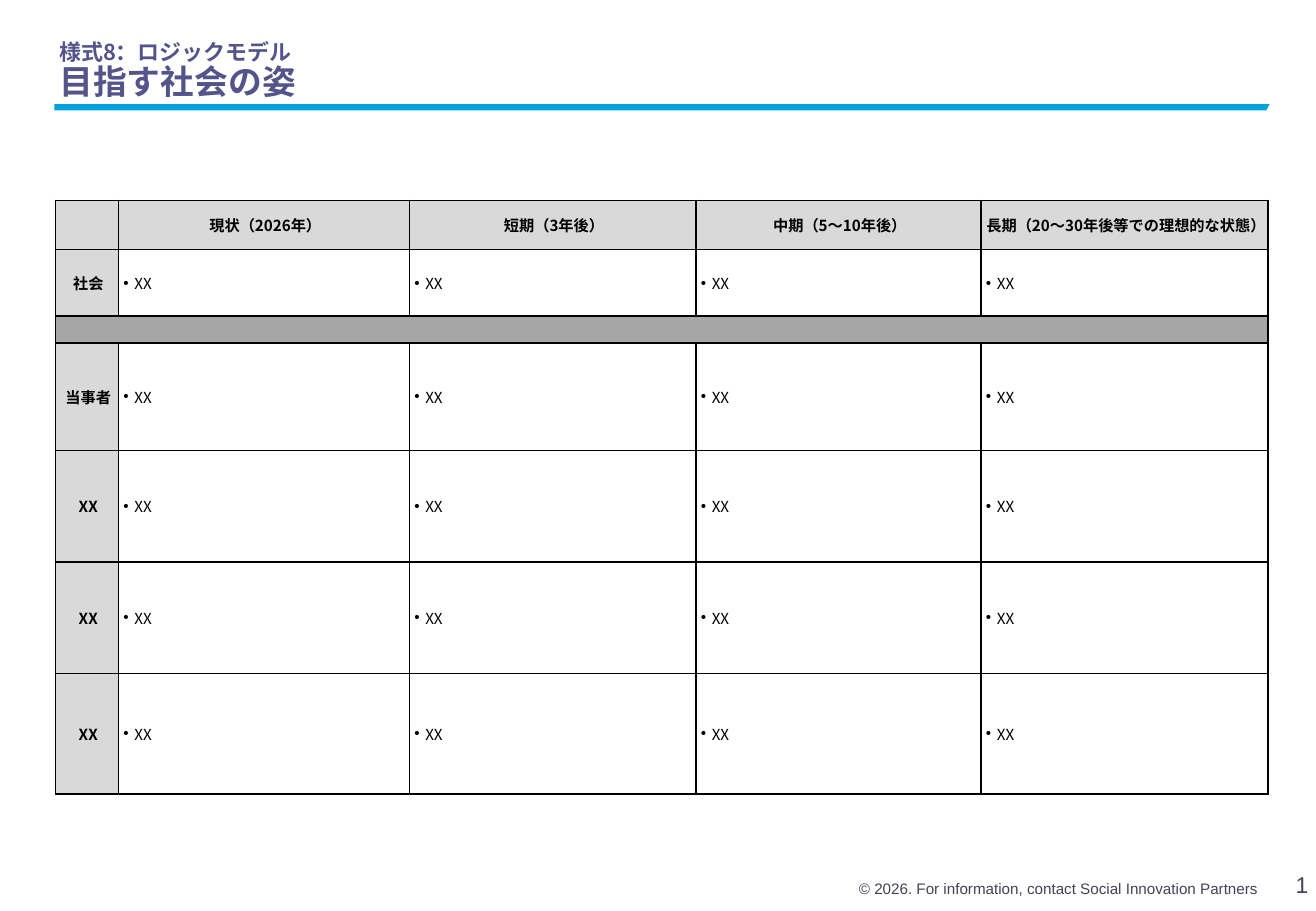
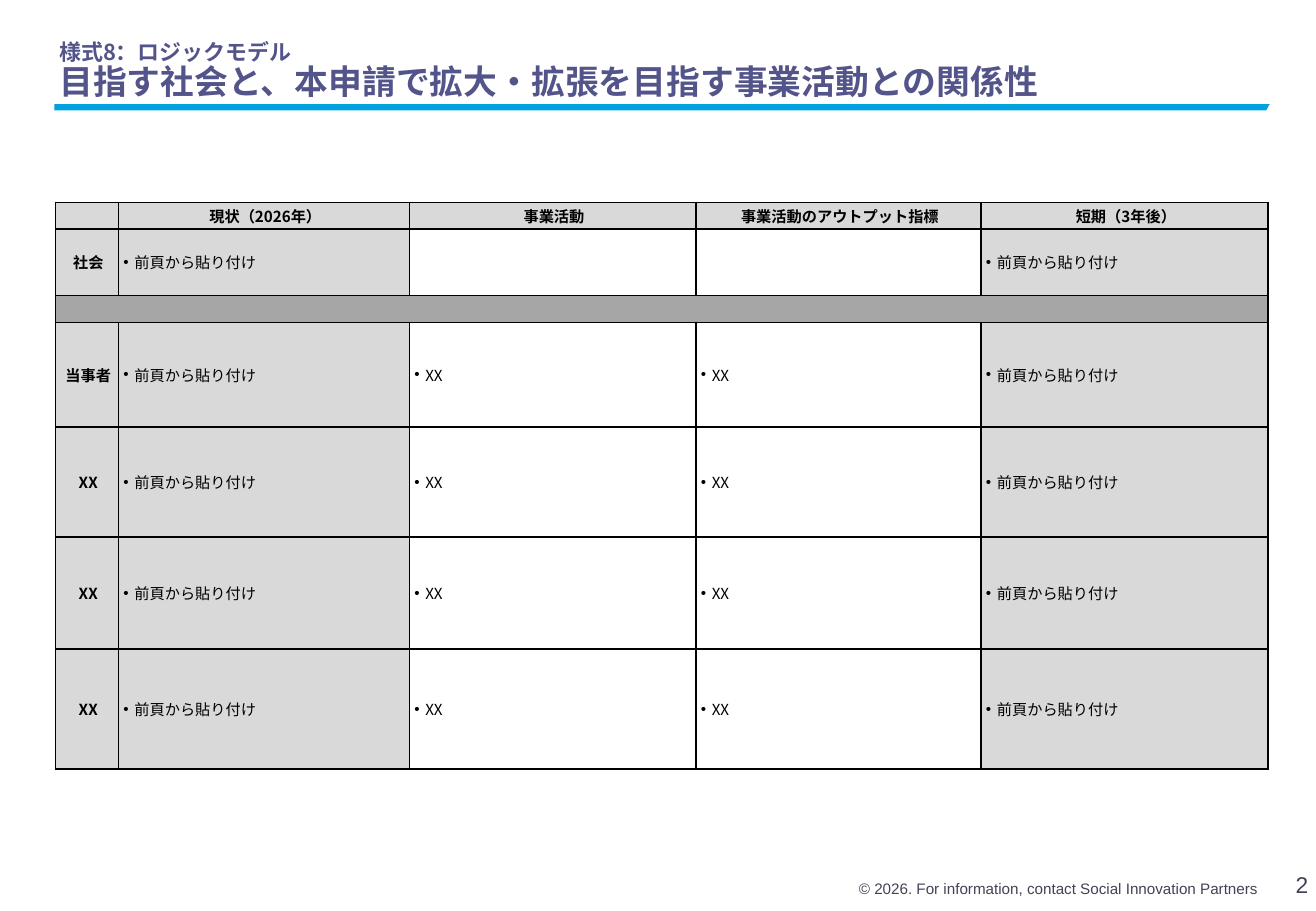
from lxml import etree
from pptx import Presentation
from pptx.dml.color import RGBColor
from pptx.enum import text as enum_text
from pptx.oxml.ns import qn
from pptx.util import Cm, Pt

COLOURS = {
    "title": "53548A", "rule": "00A1DE", "footer": "424456", "text": "000000",
    "border": "000000", "label": "D9D9D9", "band": "A6A6A6", "open": "FFFFFF",
}
JAPANESE, LATIN = "Noto Sans CJK JP", "Arial"
ALIGN, ANCHOR = enum_text.PP_ALIGN, enum_text.MSO_ANCHOR

SECTION = "様式8：ロジックモデル"
FOOTER = "© 2026. For information, contact Social Innovation Partners"
ACTORS = ["社会", None, "当事者", "XX", "XX", "XX"]  # None is the band between rows
PASTED = "前頁から貼り付け"
COLUMN_WIDTHS = [1.32, 6.08, 5.99, 5.96, 6.0]
PAGES = [
    {
        "title": "目指す社会の姿",
        "heads": ["", "現状（2026年）", "短期（3年後）", "中期（5～10年後）",
                  "長期（20～30年後等での理想的な状態）"],
        "entries": {actor: ["XX"] * 4 for actor in ACTORS},
        "top": 4.19,
        "heights": [1.03, 1.39, 0.56, 2.25, 2.33, 2.33, 2.52],
    },
    {
        "title": "目指す社会と、本申請で拡大・拡張を目指す事業活動との関係性",
        "heads": ["", "現状（2026年）", "事業活動", "事業活動のアウトプット指標", "短期（3年後）"],
        "entries": {actor: [PASTED, "XX", "XX", PASTED] for actor in ACTORS}
        | {"社会": [PASTED, "", "", PASTED]},
        "top": 4.23,
        "heights": [0.56, 1.39, 0.56, 2.19, 2.3, 2.34, 2.51],
    },
]


def write(paragraph, text, *, size=9, font=JAPANESE, colour="text", bold=False,
          align=ALIGN.LEFT, bullet=False):
    paragraph.alignment = align
    if bullet:
        properties = paragraph._p.get_or_add_pPr()
        properties.set("marL", str(Cm(0.23)))
        properties.set("indent", str(-Cm(0.23)))
        etree.SubElement(properties, qn("a:buFont"), typeface=LATIN)
        etree.SubElement(properties, qn("a:buChar"), char="•")
    if not text:
        etree.SubElement(paragraph._p, qn("a:endParaRPr"), sz=str(size * 100))
        return None
    run = paragraph.add_run()
    run.text = text
    run.font.size, run.font.name, run.font.bold = Pt(size), font, bold
    run.font.color.rgb = RGBColor.from_string(COLOURS[colour])
    etree.SubElement(run._r.get_or_add_rPr(), qn("a:ea"), typeface=font)
    return run


def set_frame(frame, wrap=True):
    """Bottom-anchored frame without margins."""
    frame.margin_left = frame.margin_right = frame.margin_top = frame.margin_bottom = 0
    frame.vertical_anchor = ANCHOR.BOTTOM
    frame.auto_size = enum_text.MSO_AUTO_SIZE.NONE
    frame.word_wrap = wrap
    return frame.paragraphs[0]


def add_text(slide, text, place, wrap=True, **style):
    box = slide.shapes.add_textbox(*map(Cm, place))
    run = write(set_frame(box.text_frame, wrap), text, font=LATIN, colour="footer",
                align=ALIGN.RIGHT, **style)
    return box, run


def furnish_layout(layout, slide):
    """Move the rule and the footer, drawn on a slide, to its layout."""
    builder = slide.shapes.build_freeform(Cm(1.14), Cm(2.18))
    corners = [(26.54, 2.18), (26.47, 2.31), (1.14, 2.31)]
    builder.add_line_segments([(Cm(x), Cm(y)) for x, y in corners])
    rule = builder.convert_to_shape()
    rule.shadow.inherit = False
    rule.fill.solid()
    rule.fill.fore_color.rgb = RGBColor.from_string(COLOURS["rule"])
    rule.line.fill.background()
    footer, _ = add_text(slide, FOOTER, (14.99, 18.29, 11.3, 0.48))
    for part in (rule, footer):
        layout.shapes.element.append(part.element)


def add_title(slide, title):
    heading = slide.shapes.title
    heading.left, heading.top, heading.width, heading.height = map(
        Cm, (1.24, 0.33, 25.68, 1.8))
    paragraph = set_frame(heading.text_frame)
    paragraph.line_spacing = 0.9
    write(paragraph, SECTION, size=13, colour="title", bold=True)
    paragraph.add_line_break()
    write(paragraph, title, size=20, colour="title", bold=True)


def add_page_number(slide, number):
    _, run = add_text(slide, str(number), (26.85, 18.31, 0.5, 0.48), wrap=False, size=13.5)
    run._r.tag = qn("a:fld")
    run._r.set("id", "{B6F15528-21DE-4FAA-801E-634DDDAF4B2B}")
    run._r.set("type", "slidenum")


def fill_cell(cell, text, fill, **style):
    cell.margin_left = Cm(0.1)
    cell.margin_right = cell.margin_top = cell.margin_bottom = Cm(0.05)
    cell.vertical_anchor = ANCHOR.MIDDLE
    write(cell.text_frame.paragraphs[0], text, **style)
    properties = cell._tc.get_or_add_tcPr()
    for side in ("lnL", "lnR", "lnT", "lnB"):
        line = etree.SubElement(properties, qn(f"a:{side}"), w=str(Pt(1)))
        paint = etree.SubElement(line, qn("a:solidFill"))
        etree.SubElement(paint, qn("a:srgbClr"), val=COLOURS["border"])
    cell.fill.solid()
    cell.fill.fore_color.rgb = RGBColor.from_string(COLOURS[fill])


def add_logic_table(slide, heads, entries, top, heights):
    table = slide.shapes.add_table(
        len(heights), len(COLUMN_WIDTHS), Cm(1.16), Cm(top),
        Cm(sum(COLUMN_WIDTHS)), Cm(sum(heights))).table
    table.first_row = table.horz_banding = False
    for column, width in zip(table.columns, COLUMN_WIDTHS):
        column.width = Cm(width)
    for row, height in zip(table.rows, heights):
        row.height = Cm(height)
    label = {"fill": "label", "bold": True, "align": ALIGN.CENTER}
    for col, head in enumerate(heads):
        fill_cell(table.cell(0, col), head, **label)
    for row, actor in enumerate(ACTORS, 1):
        if actor is None:
            for col in range(len(heads)):
                fill_cell(table.cell(row, col), "", "band")
            table.cell(row, 0).merge(table.cell(row, len(heads) - 1))
            continue
        fill_cell(table.cell(row, 0), actor, **label)
        for col, entry in enumerate(entries[actor], 1):
            fill_cell(table.cell(row, col), entry, "label" if entry == PASTED else "open",
                      bullet=bool(entry))


def main():
    deck = Presentation()
    deck.slide_width, deck.slide_height = Cm(27.51), Cm(19.05)
    layout = deck.slide_layouts[5]
    for number, page in enumerate(PAGES, 1):
        slide = deck.slides.add_slide(layout)
        if number == 1:
            furnish_layout(layout, slide)
        add_title(slide, page["title"])
        add_page_number(slide, number)
        add_logic_table(slide, page["heads"], page["entries"], page["top"], page["heights"])
    deck.save("out.pptx")


if __name__ == "__main__":
    main()
